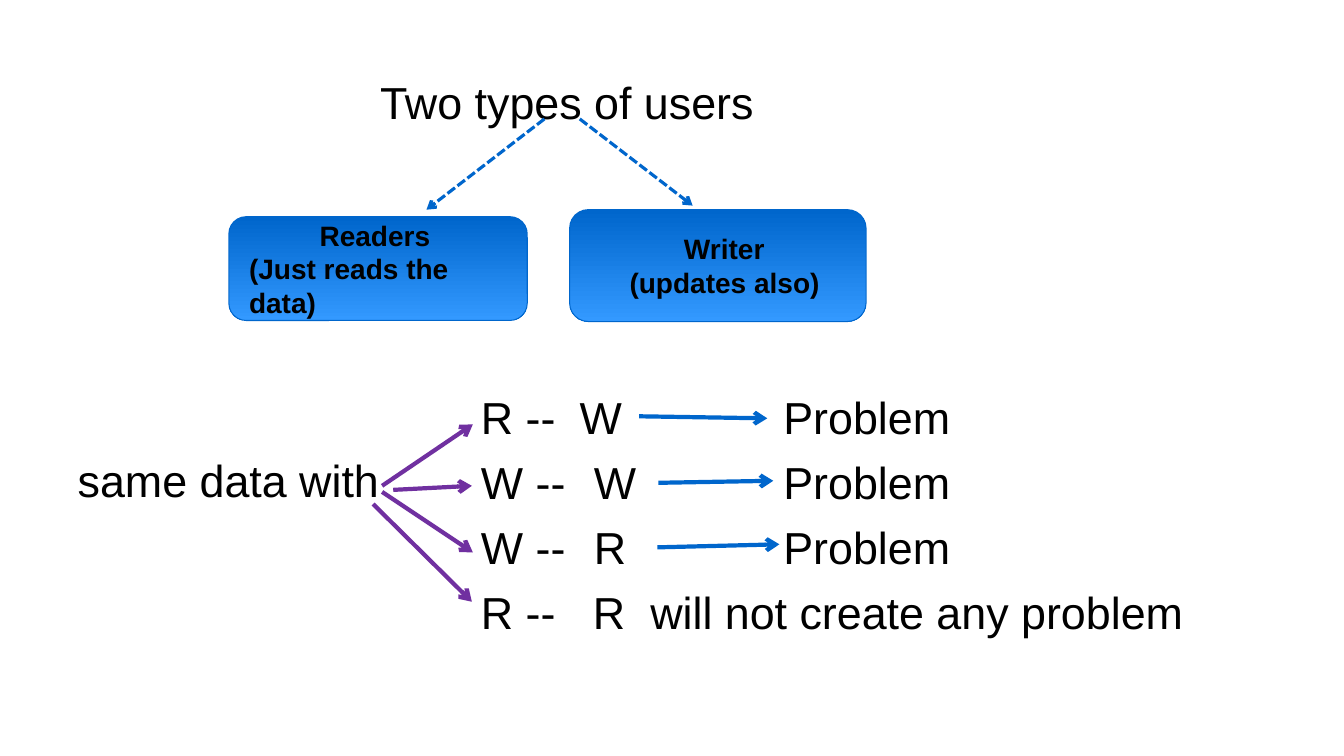
from dataclasses import dataclass

import pptx
import pptx.dml.color
import pptx.enum.dml
import pptx.enum.shapes
import pptx.enum.text
import pptx.oxml
import pptx.oxml.ns
import pptx.util


@dataclass(frozen=True)
class Theme:
    font: str = "Arial"
    ink: str = "000000"
    blue: str = "0066CC"
    light_blue: str = "3399FF"
    purple: str = "7030A0"
    body_size: float = 32
    box_size: float = 20
    line_gap: float = 8
    outline: float = 0.75
    branch_width: float = 2.25
    arrow_width: float = 3


def cells(count):
    """Length of a number of grid cells; ten columns or rows make an inch."""
    return pptx.util.Inches(count / 10)


def rgb(value):
    return pptx.dml.color.RGBColor.from_string(value)


class Board:
    """Draws on one slide, with places given as (column, row) of the grid."""

    def __init__(self, slide, theme):
        self.shapes = slide.shapes
        self.theme = theme

    def set_lines(self, frame, lines, size, bold=False, gap=0):
        frame.text = "\n".join(lines)
        for index, paragraph in enumerate(frame.paragraphs):
            paragraph.alignment = pptx.enum.text.PP_ALIGN.LEFT
            paragraph.space_before = pptx.util.Pt(gap if index else 0)
            for run in paragraph.runs:
                run.font.name = self.theme.font
                run.font.size = pptx.util.Pt(size)
                run.font.bold = bold
                run.font.color.rgb = rgb(self.theme.ink)

    def text(self, column, row, columns, rows, lines):
        box = self.shapes.add_textbox(*map(cells, (column, row, columns, rows)))
        frame = box.text_frame
        frame.word_wrap = True
        frame.margin_left = frame.margin_right = 0
        frame.margin_top = frame.margin_bottom = 0
        self.set_lines(frame, lines, self.theme.body_size, gap=self.theme.line_gap)
        return frame

    def tabs(self, paragraph, stops):
        properties = paragraph._p.get_or_add_pPr()
        tab_list = pptx.oxml.parse_xml(
            f"<a:tabLst {pptx.oxml.ns.nsdecls('a')}>"
            + "".join(f'<a:tab pos="{cells(stop)}" algn="l"/>' for stop in stops)
            + "</a:tabLst>"
        )
        properties.append(tab_list)

    def user_box(self, column, row, columns, rows, lines):
        """Rounded box; lines maps each text to its indent in columns."""
        box = self.shapes.add_shape(
            pptx.enum.shapes.MSO_SHAPE.ROUNDED_RECTANGLE,
            *map(cells, (column, row, columns, rows)),
        )
        box.shadow.inherit = False
        box.fill.gradient()
        box.fill.gradient_angle = 270
        shades = (self.theme.blue, self.theme.light_blue)
        for stop, shade in zip(box.fill.gradient_stops, shades):
            stop.color.rgb = rgb(shade)
        box.line.color.rgb = rgb(self.theme.blue)
        box.line.width = pptx.util.Pt(self.theme.outline)
        frame = box.text_frame
        frame.word_wrap = True
        frame.vertical_anchor = pptx.enum.text.MSO_ANCHOR.MIDDLE
        frame.margin_left, frame.margin_right = cells(1.5), 0
        self.set_lines(frame, lines, self.theme.box_size, bold=True)
        for paragraph, indent in zip(frame.paragraphs, lines.values()):
            paragraph._p.get_or_add_pPr().set("marL", str(cells(indent)))

    def arrow(self, start, end, color, width, dashed=False):
        arrow = self.shapes.add_connector(
            pptx.enum.shapes.MSO_CONNECTOR.STRAIGHT, *map(cells, start + end)
        )
        arrow.line.color.rgb = rgb(color)
        arrow.line.width = pptx.util.Pt(width)
        if dashed:
            arrow.line.dash_style = pptx.enum.dml.MSO_LINE.SQUARE_DOT
        namespace = pptx.oxml.ns.nsdecls("a")
        arrow.line._get_or_add_ln().append(
            pptx.oxml.parse_xml(f'<a:tailEnd {namespace} type="arrow"/>')
        )
        arrow._element.spPr.append(pptx.oxml.parse_xml(f"<a:effectLst {namespace}/>"))


def draw_users(board):
    theme = board.theme
    board.text(37.7, 7.45, 45, 5.5, ["Two types of users"])
    for start, end in (((54, 11.8), (42.3, 20.8)), ((57.5, 11.8), (68.7, 20.4))):
        board.arrow(start, end, theme.blue, theme.branch_width, dashed=True)
    board.user_box(22.7, 21.5, 29.6, 10.3, {"Readers": 7, "(Just reads the data)": 0})
    board.user_box(56.5, 20.8, 29.4, 11.1, {"Writer": 9.3, "(updates also)": 3.9})


def draw_cases(board):
    theme = board.theme
    board.text(7.7, 44.9, 32, 5.5, ["same data with"])
    # Each case: its text and the tab stops of its second user and its outcome
    cases = {
        "R --\tW\tProblem": (9.8, 30),
        "W --\tW\tProblem": (11.2, 30),
        "W --\tR\tProblem": (11.2, 30),
        "R --\tR\twill not create any problem": (11.1, 16.8),
    }
    frame = board.text(47.7, 38.65, 78, 25, cases)
    for paragraph, stops in zip(frame.paragraphs, cases.values()):
        board.tabs(paragraph, stops)

    to_problem = (
        ((63.4, 41.3), (76.1, 41.5)),
        ((65.3, 47.9), (76.7, 47.7)),
        ((65.2, 54.3), (77.3, 54)),
    )
    to_case = (
        ((37.9, 48.2), (46.9, 42.1)),
        ((39, 48.6), (46.8, 48.2)),
        ((37.9, 48.8), (46.9, 54.8)),
        ((37, 50), (46.8, 59.7)),
    )
    for color, arrows in ((theme.blue, to_problem), (theme.purple, to_case)):
        for start, end in arrows:
            board.arrow(start, end, color, theme.arrow_width)


def main():
    presentation = pptx.Presentation()
    presentation.slide_width = pptx.util.Inches(13.33)
    presentation.slide_height = pptx.util.Inches(7.5)
    slide = presentation.slides.add_slide(presentation.slide_layouts[6])
    board = Board(slide, Theme())
    draw_users(board)
    draw_cases(board)
    presentation.save("out.pptx")


if __name__ == "__main__":
    main()
